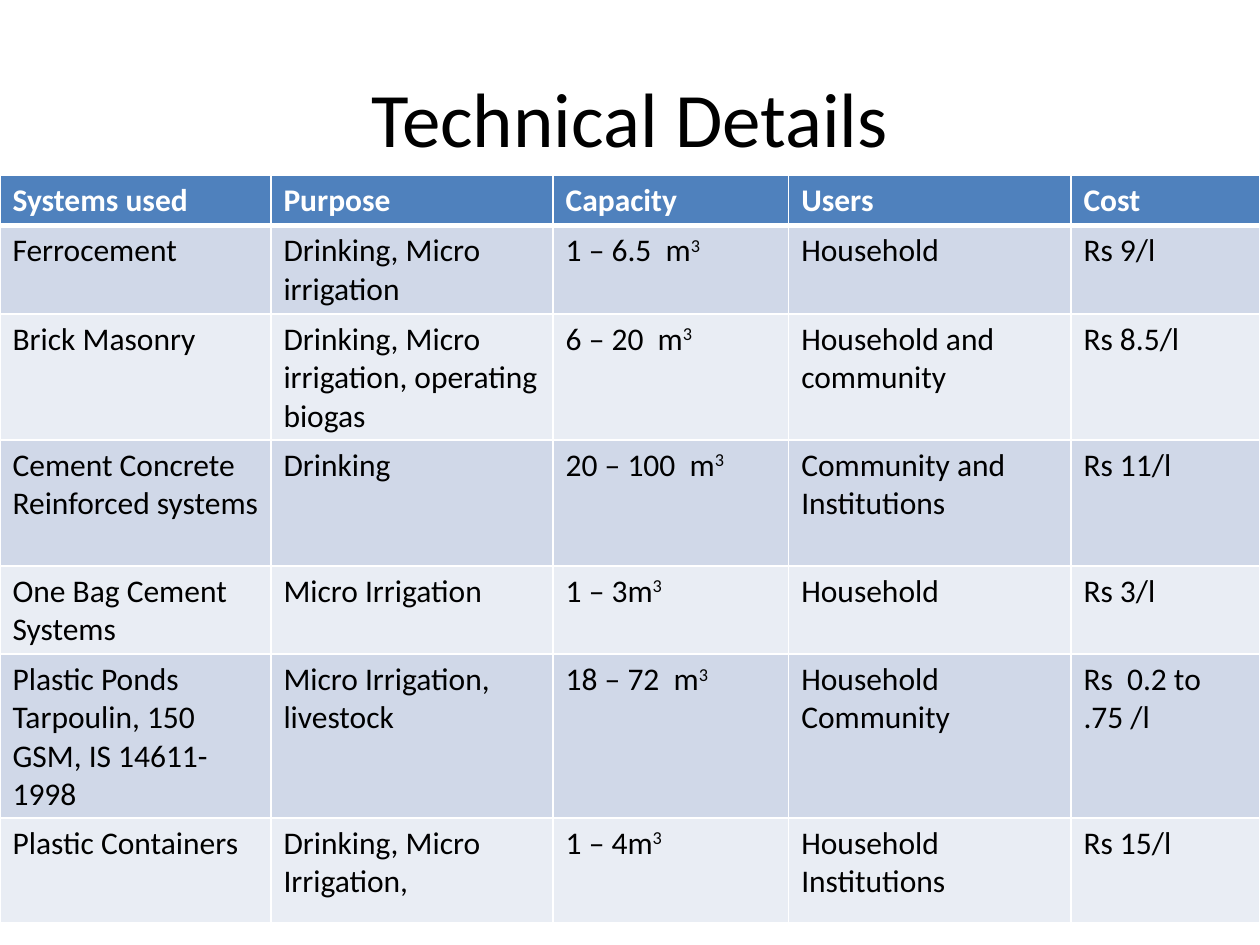
import lxml.etree
import pptx
import pptx.dml.color
import pptx.enum.text
import pptx.oxml.ns
import pptx.util
from pptx.util import Inches

FONT = "Calibri"
HEADER = ["Systems used", "Purpose", "Capacity", "Users", "Cost"]
SYSTEMS = [
    ["Ferrocement", "Drinking, Micro irrigation", "1 – 6.5  m^3", "Household", "Rs 9/l"],
    ["Brick Masonry", "Drinking, Micro irrigation, operating biogas", "6 – 20  m^3",
     "Household and community", "Rs 8.5/l"],
    ["Cement Concrete Reinforced systems", "Drinking", "20 – 100  m^3",
     "Community and Institutions", "Rs 11/l"],
    ["One Bag Cement Systems", "Micro Irrigation", "1 – 3m^3", "Household", "Rs 3/l"],
    ["Plastic Ponds\nTarpoulin, 150 GSM, IS 14611-1998", "Micro Irrigation, livestock",
     "18 – 72  m^3", "Household Community", "Rs  0.2 to .75 /l"],
    ["Plastic Containers", "Drinking, Micro Irrigation,", "1 – 4m^3",
     "Household Institutions", "Rs 15/l"],
]
COLUMN_WIDTHS = [2.15, 2.24, 1.87, 2.24, 1.5]
ROW_HEIGHTS = [0.39, 0.67, 0.96, 1, 0.67, 1.25, 0.83]


def color(hex_string):
    """Return the colour for a hex string."""
    return pptx.dml.color.RGBColor.from_string(hex_string)


def style_run(run, size, ink, bold=False):
    """Set the font of one run."""
    run.font.name = FONT
    run.font.size = pptx.util.Pt(size)
    run.font.bold = bold
    run.font.color.rgb = color(ink)


def add_title(slide, title):
    """Add the centred slide title."""
    heading = slide.shapes.add_textbox(Inches(0.5), Inches(0.3), Inches(9), Inches(1.25))
    frame = heading.text_frame
    frame.word_wrap = True
    frame.vertical_anchor = pptx.enum.text.MSO_ANCHOR.MIDDLE
    frame.text = title
    frame.paragraphs[0].alignment = pptx.enum.text.PP_ALIGN.CENTER
    style_run(frame.paragraphs[0].runs[0], 44, "000000")


def set_borders(cell, widths):
    """Draw white borders, given the width in points of each side."""
    properties = cell._tc.get_or_add_tcPr()
    qn = pptx.oxml.ns.qn
    for side, width in widths.items():
        line = lxml.etree.SubElement(properties, qn(f"a:ln{side}"), w=str(pptx.util.Pt(width)))
        fill = lxml.etree.SubElement(line, qn("a:solidFill"))
        lxml.etree.SubElement(fill, qn("a:srgbClr"), val="FFFFFF")


def write_cell(cell, text, ink, bold):
    """Write cell text, raising whatever follows a caret."""
    cell.text_frame.text = text.replace("^", "")
    for paragraph, line in zip(cell.text_frame.paragraphs, text.split("\n")):
        base, _, exponent = line.partition("^")
        paragraph.runs[0].text = base
        if exponent:
            raised = paragraph.add_run()
            raised.text = exponent
            raised.font._element.set("baseline", "30000")
        for run in paragraph.runs:
            style_run(run, 18, ink, bold)


def add_systems_table(slide):
    """Add the table of storage systems."""
    rows = [HEADER] + SYSTEMS
    table = slide.shapes.add_table(
        len(rows), len(HEADER), Inches(0), Inches(1.39), Inches(10), Inches(sum(ROW_HEIGHTS))
    ).table
    for column, width in zip(table.columns, COLUMN_WIDTHS):
        column.width = Inches(width)
    for row, height in zip(table.rows, ROW_HEIGHTS):
        row.height = Inches(height)
    for r, texts in enumerate(rows):
        is_header = r == 0
        band = "4F81BD" if is_header else ("E9EDF4", "D0D8E8")[r % 2]
        widths = {"L": 1, "R": 1, "T": 3 if r == 1 else 1, "B": 3 if is_header else 1}
        for c, text in enumerate(texts):
            cell = table.cell(r, c)
            write_cell(cell, text, "FFFFFF" if is_header else "000000", is_header)
            set_borders(cell, widths)
            cell.fill.solid()
            cell.fill.fore_color.rgb = color(band)


def main():
    """Build and save the slide."""
    deck = pptx.Presentation()
    deck.slide_width, deck.slide_height = Inches(10), Inches(7.5)
    slide = deck.slides.add_slide(deck.slide_layouts[6])
    add_title(slide, "Technical Details")
    add_systems_table(slide)
    deck.save("out.pptx")


if __name__ == "__main__":
    main()
